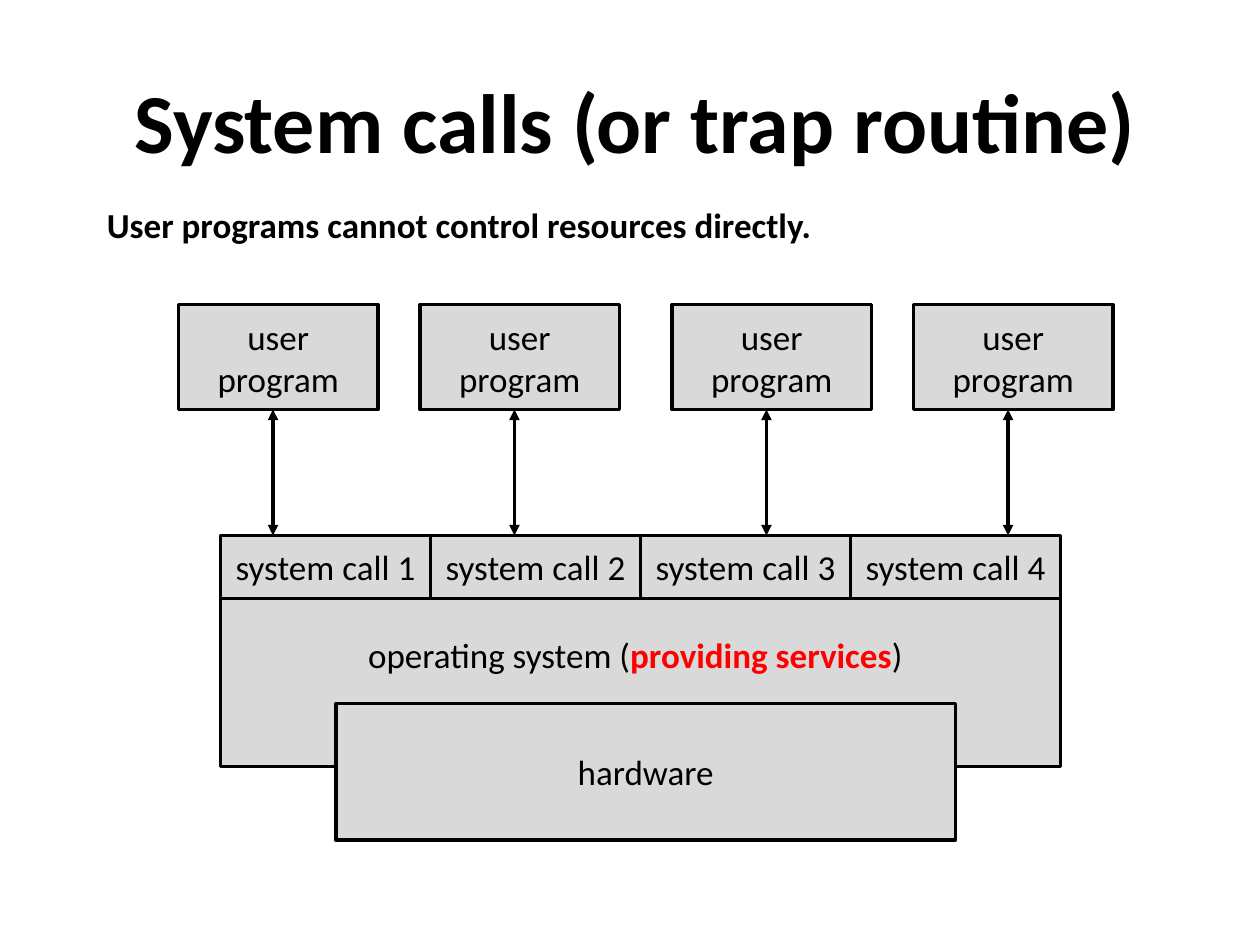
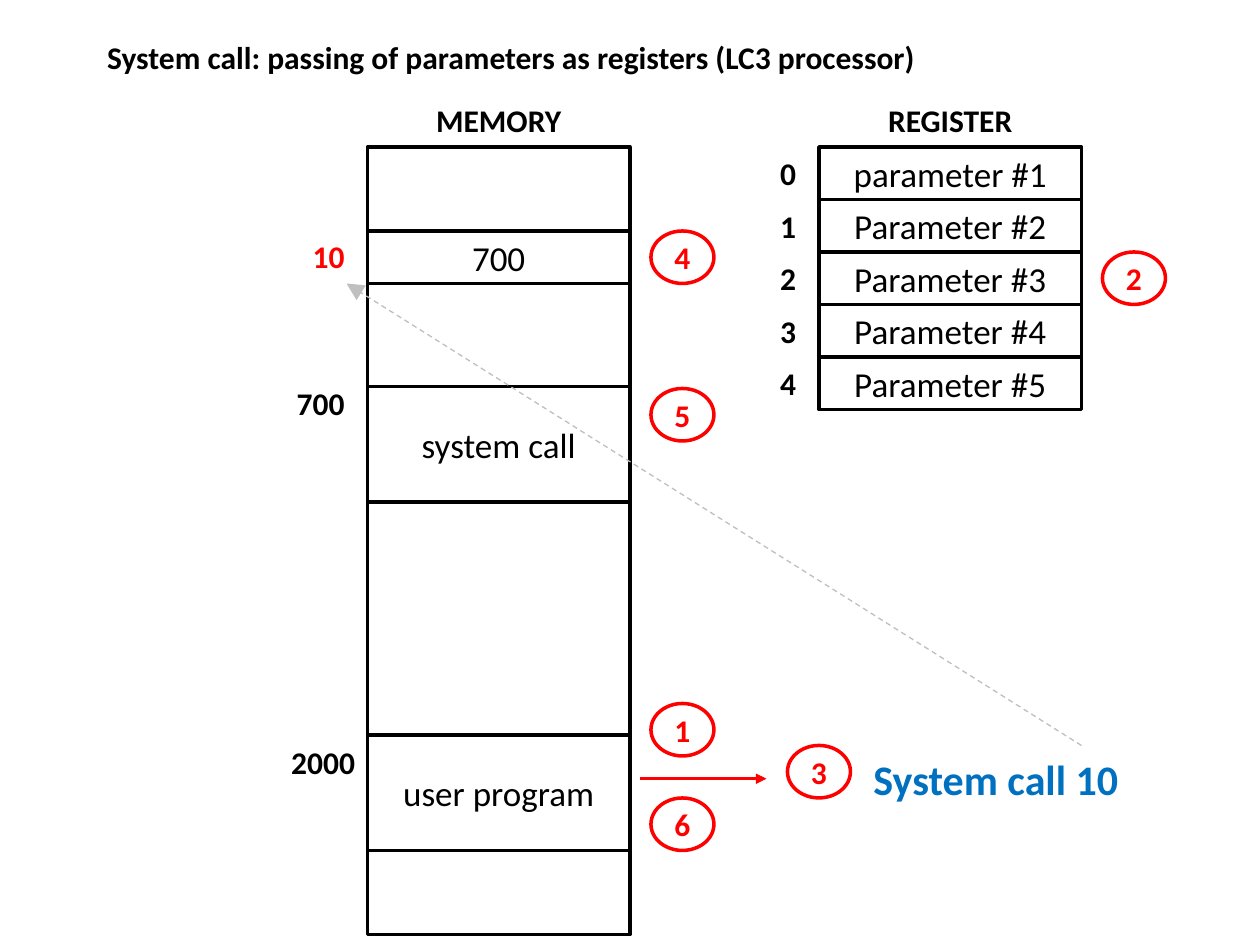
import pptx
import pptx.util
import pptx.dml.color
import pptx.enum.dml
import pptx.enum.shapes
import pptx.enum.text
import pptx.oxml.ns
import lxml.etree

Pt = pptx.util.Pt
RGBColor = pptx.dml.color.RGBColor
SHAPE = pptx.enum.shapes.MSO_SHAPE
ALIGN = pptx.enum.text.PP_ALIGN
ANCHOR = pptx.enum.text.MSO_ANCHOR
qn = pptx.oxml.ns.qn

# Shared look
FONT = "Calibri"
BLACK = RGBColor(0x00, 0x00, 0x00)
RED = RGBColor(0xFF, 0x00, 0x00)
BLUE = RGBColor(0x00, 0x70, 0xC0)
GREY_FILL = RGBColor(0xD9, 0xD9, 0xD9)
GREY_LINE = RGBColor(0xBF, 0xBF, 0xBF)
BOX_SIZE, LABEL_SIZE = 20, 18

# Content of slide 1: (text, bold, colour) runs where the style varies
CALLS_TITLE = "System calls (or trap routine)"
CALLS_NOTE = "User programs cannot control resources directly."
USER_PROGRAM = ["user", "program"]
PROGRAM_LEFTS = [102, 240, 384, 522]
SYSTEM_CALLS = ["system call 1", "system call 2", "system call 3", "system call 4"]
OS_RUNS = [("operating system (", False, BLACK),
           ("providing services", True, RED),
           (")", False, BLACK)]

# Content of slide 2
PASSING_TITLE = "System call: passing of parameters as registers (LC3 processor)"
MEMORY_CELLS = [("700", 132, 30), ("system call", 221, 66), ("user program", 420, 66)]
ADDRESSES = [("10", 132, 60, RED), ("700", 216, 60, BLACK), ("2000", 421, 66, BLACK)]
PARAMETERS = ["parameter #1", "Parameter #2", "Parameter #3", "Parameter #4", "Parameter #5"]
STEPS = [("1", 372, 402), ("2", 630, 144), ("3", 450, 426),
         ("4", 372, 132), ("5", 372, 222), ("6", 372, 456)]


def add_run(paragraph, text, size, bold=False, colour=BLACK):
    run = paragraph.add_run()
    run.text = text
    run.font.name = FONT
    run.font.size = Pt(size)
    run.font.bold = bold
    run.font.color.rgb = colour


def set_title(slide, text, place, size, align):
    title = slide.shapes.title
    title.left, title.top, title.width, title.height = map(Pt, place)
    frame = title.text_frame
    frame.word_wrap = True
    frame.auto_size = pptx.enum.text.MSO_AUTO_SIZE.NONE
    frame.vertical_anchor = ANCHOR.TOP
    frame.paragraphs[0].alignment = align
    add_run(frame.paragraphs[0], text, size, True)


def add_label(slide, runs, place, size=LABEL_SIZE, align=ALIGN.LEFT):
    frame = slide.shapes.add_textbox(*map(Pt, place)).text_frame
    frame.word_wrap = True
    frame.paragraphs[0].alignment = align
    for text, bold, colour in runs:
        add_run(frame.paragraphs[0], text, size, bold, colour)


def add_box(slide, place, lines=(), fill=None, kind=SHAPE.RECTANGLE,
            colour=BLACK, size=BOX_SIZE, bold=False):
    box = slide.shapes.add_shape(kind, *map(Pt, place))
    box.shadow.inherit = False
    if fill is None:
        box.fill.background()
    else:
        box.fill.solid()
        box.fill.fore_color.rgb = fill
    box.line.color.rgb = colour
    box.line.width = Pt(2)
    frame = box.text_frame
    frame.margin_left = frame.margin_right = frame.margin_top = frame.margin_bottom = 0
    frame.vertical_anchor = ANCHOR.MIDDLE
    paragraph = frame.paragraphs[0]
    paragraph.alignment = ALIGN.CENTER
    for number, line in enumerate(lines):
        if number:
            paragraph.add_line_break()
        add_run(paragraph, line, size, bold, colour)


def add_arrow(slide, start, end, colour=BLACK, width=2, ends=("tailEnd",),
              head_size="med", dashed=False):
    arrow = slide.shapes.add_connector(
        pptx.enum.shapes.MSO_CONNECTOR.STRAIGHT, *map(Pt, start + end))
    arrow.line.color.rgb = colour
    arrow.line.width = Pt(width)
    if dashed:
        arrow.line.dash_style = pptx.enum.dml.MSO_LINE.DASH
    properties = arrow._element.spPr
    outline = properties.find(qn("a:ln"))
    for end_name in ends:
        lxml.etree.SubElement(outline, qn("a:" + end_name),
                              type="triangle", w=head_size, len=head_size)
    lxml.etree.SubElement(properties, qn("a:effectLst"))


def build_system_calls(slide):
    set_title(slide, CALLS_TITLE, (42, 36, 642, 65.5), 48, ALIGN.CENTER)
    add_label(slide, [(CALLS_NOTE, True, BLACK)], (54, 112.5, 630, 31.5), BOX_SIZE)

    # Operating system and the hardware below it
    os_left, os_top, os_width = 126, 306, 480
    add_box(slide, (os_left, os_top, os_width, 132), fill=GREY_FILL)
    add_box(slide, (192, 402, 354, 78), ["hardware"], GREY_FILL)
    add_label(slide, OS_RUNS, (198, 358.5, 330, 31.5), BOX_SIZE, ALIGN.CENTER)

    # User programs, each linked to the operating system
    program_top, program_height = 174, 60
    for left in PROGRAM_LEFTS:
        add_box(slide, (left, program_top, 114, program_height), USER_PROGRAM, GREY_FILL)
        add_arrow(slide, (left + 54, program_top + program_height), (left + 54, os_top),
                  ends=("headEnd", "tailEnd"))

    # System calls along the top of the operating system
    call_width = os_width / len(SYSTEM_CALLS)
    for number, call in enumerate(SYSTEM_CALLS):
        add_box(slide, (os_left + number * call_width, os_top, call_width, 36),
                [call], GREY_FILL)


def build_parameter_passing(slide):
    set_title(slide, PASSING_TITLE, (54, 18, 648, 30), LABEL_SIZE, ALIGN.LEFT)
    memory_left, register_left, column_top, column_width = 210, 468, 84, 150
    for heading, left in (("MEMORY", memory_left), ("REGISTER", register_left)):
        add_label(slide, [(heading, True, BLACK)], (left, 54, column_width, 29),
                  align=ALIGN.CENTER)

    # Memory with its addresses
    add_box(slide, (memory_left, column_top, column_width, 450))
    for text, top, height in MEMORY_CELLS:
        add_box(slide, (memory_left, top, column_width, height), [text])
    for address, top, width, colour in ADDRESSES:
        add_label(slide, [(address, True, colour)], (144, top, width, 29), align=ALIGN.RIGHT)

    # Registers with their numbers
    row_height = 30
    for number, parameter in enumerate(PARAMETERS):
        top = column_top + number * row_height
        add_box(slide, (register_left, top, column_width, row_height), [parameter])
        add_label(slide, [(str(number), True, BLACK)], (432, top + 0.6, 30, 29),
                  align=ALIGN.RIGHT)

    # The call and its numbered steps
    add_arrow(slide, (366, 445), (438, 445), RED)
    add_label(slide, [("System call 10", True, BLUE)], (492, 427, 156, 36), 24)
    for step, left, top in STEPS:
        add_box(slide, (left, top, 36, 30), [step], kind=SHAPE.OVAL,
                colour=RED, size=LABEL_SIZE, bold=True)
    add_arrow(slide, (618, 426), (198, 162), GREY_LINE, 0.75, head_size="lg", dashed=True)


def main():
    deck = pptx.Presentation()
    deck.slide_width, deck.slide_height = Pt(720), Pt(540)
    title_only = deck.slide_layouts[5]
    for build in (build_system_calls, build_parameter_passing):
        build(deck.slides.add_slide(title_only))
    deck.save("out.pptx")


if __name__ == "__main__":
    main()
